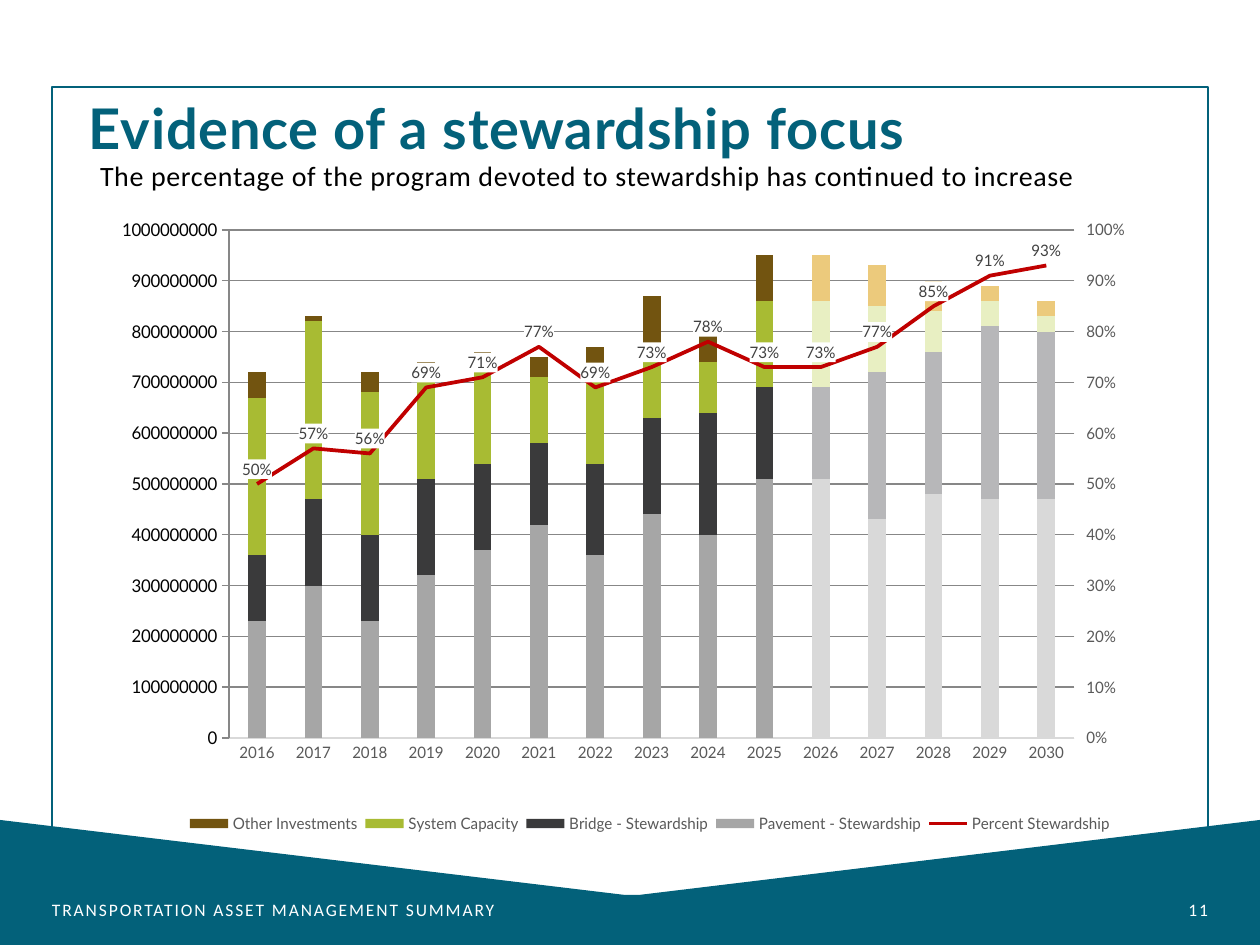
"""Build the stewardship slide with a stacked column and line chart."""
from dataclasses import dataclass

from pptx import Presentation
from pptx.chart.axis import ValueAxis
from pptx.chart.data import CategoryChartData
from pptx.dml.color import RGBColor
from pptx.enum.chart import (XL_CHART_TYPE, XL_LABEL_POSITION, XL_LEGEND_POSITION,
                             XL_MARKER_STYLE, XL_TICK_MARK)
from pptx.enum.shapes import MSO_SHAPE
from pptx.enum.text import MSO_ANCHOR, PP_ALIGN
from pptx.oxml import parse_xml
from pptx.oxml.ns import nsdecls, qn
from pptx.util import Pt

STACKED = XL_CHART_TYPE.COLUMN_STACKED
ABOVE = XL_LABEL_POSITION.ABOVE
LEGEND_RIGHT = XL_LEGEND_POSITION.RIGHT
NO_MARKER = XL_MARKER_STYLE.NONE
NO_TICK, TICK_OUT = XL_TICK_MARK.NONE, XL_TICK_MARK.OUTSIDE
RECTANGLE = MSO_SHAPE.RECTANGLE
TOP, BOTTOM = MSO_ANCHOR.TOP, MSO_ANCHOR.BOTTOM
LEFT, RIGHT = PP_ALIGN.LEFT, PP_ALIGN.RIGHT

EMU_PER_PX = 914400 / 126
MILLION = 1_000_000
CHART_WIDTH, CHART_HEIGHT = 1016, 655
COLORS = {
    "teal": "03617A", "white": "FFFFFF", "black": "000000", "grid": "D9D9D9",
    "axis": "595959", "label": "404040", "red": "C00000",
    "pavement": "A6A6A6", "pavement_plan": "D9D9D9",
    "bridge": "3A3A3B", "bridge_plan": "B7B7B9",
    "capacity": "A8BB33", "capacity_plan": "E8EFC2",
    "other": "725410", "other_plan": "ECCA7C",
}
YEARS = range(2016, 2031)
FIRST_PLANNED_YEAR = 2026


@dataclass(frozen=True)
class Investment:
    name: str
    color: str
    millions: tuple[int, ...]


INVESTMENTS = (
    Investment("Pavement - Stewardship", "pavement",
               (230, 300, 230, 320, 370, 420, 360, 440, 400, 510, 510, 430, 480, 470, 470)),
    Investment("Bridge - Stewardship", "bridge",
               (130, 170, 170, 190, 170, 160, 180, 190, 240, 180, 180, 290, 280, 340, 330)),
    Investment("System Capacity", "capacity",
               (310, 350, 280, 210, 180, 130, 170, 120, 100, 170, 170, 130, 80, 50, 30)),
    Investment("Other Investments", "other",
               (50, 10, 40, 20, 40, 40, 60, 120, 80, 90, 90, 80, 60, 30, 30)),
)
STEWARDSHIP = (.5, .57, .56, .69, .71, .77, .69, .73, .78, .73, .73, .77, .85, .91, .93)


def px(length: int) -> int:
    return round(length * EMU_PER_PX)


def rgb(name: str) -> RGBColor:
    return RGBColor.from_string(COLORS[name])


def paint(fill, color: str) -> None:
    fill.solid()
    fill.fore_color.rgb = rgb(color)


def style_font(font, size: int, color: str, family: str = "Lato") -> None:
    font.size, font.name = Pt(size), family
    font.color.rgb = rgb(color)


def add_text(slide, text: str, box: tuple[int, ...], *, size: int, color: str,
             family: str = "Calibri", bold: bool = False, tracking: float = 0.4,
             anchor=TOP, align=LEFT, side_inset: int = 13, spacing: float = 1.0) -> None:
    frame = slide.shapes.add_textbox(*map(px, box)).text_frame
    frame.word_wrap = True
    frame.vertical_anchor = anchor
    frame.margin_left = frame.margin_right = px(side_inset)
    paragraph = frame.paragraphs[0]
    paragraph.alignment, paragraph.line_spacing = align, spacing
    run = paragraph.add_run()
    run.text = text
    style_font(run.font, size, color, family)
    run.font.bold = bold
    run.font._element.set("spc", str(round(tracking * 100)))


def add_frame(slide) -> None:
    border = slide.shapes.add_shape(RECTANGLE, px(52), px(87), px(1156), px(839))
    border.shadow.inherit = False
    border.fill.background()
    border.line.color.rgb = rgb("teal")
    border.line.width = Pt(1)


def add_banner(slide) -> None:
    outline = slide.shapes.build_freeform(0, 820, scale=EMU_PER_PX)
    outline.add_line_segments([(625, 895), (639, 895), (1260, 820), (1260, 945), (0, 945)])
    banner = outline.convert_to_shape()
    banner.shadow.inherit = False
    paint(banner.fill, "teal")
    banner.line.fill.background()


def set_layout(parent, index: int, box: tuple[int, ...], target: str = "") -> None:
    for layout in parent.findall(qn("c:layout")):
        parent.remove(layout)
    sizes = (CHART_WIDTH, CHART_HEIGHT) * 2
    shares = "".join(f'<c:{key} val="{length / size:.4f}"/>'
                     for key, length, size in zip("xywh", box, sizes))
    parent.insert(index, parse_xml(
        f'<c:layout {nsdecls("c")}><c:manualLayout>{target}'
        f'<c:xMode val="edge"/><c:yMode val="edge"/>{shares}'
        '</c:manualLayout></c:layout>'))


def move_to_right_axis(plot_area) -> ValueAxis:
    columns = plot_area.find(qn("c:barChart"))
    share = columns.findall(qn("c:ser"))[-1]
    for column_only in share.findall(qn("c:invertIfNegative")):
        share.remove(column_only)
    line = parse_xml(
        f'<c:lineChart {nsdecls("c")}><c:grouping val="standard"/><c:varyColors val="0"/>'
        '<c:marker val="1"/><c:axId val="5001"/><c:axId val="5002"/></c:lineChart>')
    line.insert(2, share)
    columns.addnext(line)
    years = parse_xml(
        f'<c:catAx {nsdecls("c")}><c:axId val="5001"/><c:scaling/><c:delete val="1"/>'
        '<c:axPos val="b"/><c:crossAx val="5002"/></c:catAx>')
    percents = parse_xml(
        f'<c:valAx {nsdecls("c")}><c:axId val="5002"/><c:scaling/><c:delete val="0"/>'
        '<c:axPos val="r"/><c:crossAx val="5001"/><c:crosses val="max"/></c:valAx>')
    plot_area.findall(qn("c:valAx"))[-1].addnext(percents)
    percents.addnext(years)
    return ValueAxis(percents)


def style_value_axis(axis: ValueAxis, top: float, number_format: str, tick) -> None:
    axis.minimum_scale, axis.maximum_scale, axis.major_unit = 0, top, top / 10
    axis.major_tick_mark = tick
    axis.tick_labels.number_format = number_format
    axis.tick_labels.number_format_is_linked = False
    style_font(axis.tick_labels.font, 9, "axis")
    axis.format.line.fill.background()


def style_share_line(share) -> None:
    share.smooth = False
    share.marker.style = NO_MARKER
    share.format.line.color.rgb = rgb("red")
    share.format.line.width = Pt(2.25)
    labels = share.data_labels
    labels.show_value, labels.position = True, ABOVE
    labels.number_format, labels.number_format_is_linked = "0%", False
    style_font(labels.font, 9, "label")
    labels._element.find(qn("c:numFmt")).addnext(parse_xml(
        f'<c:spPr {nsdecls("c", "a")}><a:solidFill>'
        f'<a:srgbClr val="{COLORS["white"]}"/></a:solidFill></c:spPr>'))


def add_program_chart(slide) -> None:
    program = CategoryChartData()
    program.categories = [str(year) for year in YEARS]
    for investment in INVESTMENTS:
        program.add_series(investment.name, [m * MILLION for m in investment.millions])
    program.add_series("Percent Stewardship", STEWARDSHIP, "0%")
    box = map(px, (122, 200, CHART_WIDTH, CHART_HEIGHT))
    chart = slide.shapes.add_chart(STACKED, *box, program).chart
    chart.has_title = False
    style_font(chart.font, 10, "black")

    plot_area = chart.element.find(".//" + qn("c:plotArea"))
    percent_axis = move_to_right_axis(plot_area)
    set_layout(plot_area, 0, (69, 30, 881, 508), '<c:layoutTarget val="inner"/>')
    style_value_axis(chart.value_axis, 1000 * MILLION, '"$"#,##0,,', NO_TICK)
    style_value_axis(percent_axis, 1, "0%", TICK_OUT)
    years = chart.category_axis
    years.major_tick_mark = NO_TICK
    style_font(years.tick_labels.font, 9, "axis")
    for rule in (years.format.line, chart.value_axis.major_gridlines.format.line):
        rule.color.rgb = rgb("grid")
        rule.width = Pt(0.75)

    columns, shares = chart.plots
    columns.gap_width, columns.overlap, columns.vary_by_categories = 219, 100, False
    for investment, series in zip(INVESTMENTS, columns.series):
        paint(series.format.fill, investment.color)
        for index, year in enumerate(YEARS):
            if year >= FIRST_PLANNED_YEAR:
                paint(series.points[index].format.fill, investment.color + "_plan")
    style_share_line(shares.series[0])

    chart.has_legend = True
    chart.legend.position = LEGEND_RIGHT
    chart.legend.include_in_layout = False
    style_font(chart.legend.font, 9, "axis")
    set_layout(chart.element.find(".//" + qn("c:legend")), 1, (20, 607, 975, 33))


def main() -> None:
    deck = Presentation()
    deck.slide_width, deck.slide_height = px(1260), px(945)
    slide = deck.slides.add_slide(deck.slide_layouts[6])
    add_banner(slide)
    add_frame(slide)
    footer = {"size": 10, "color": "white", "tracking": 1.1, "anchor": BOTTOM, "side_inset": 0}
    add_text(slide, "TRANSPORTATION ASSET MANAGEMENT SUMMARY", (52, 876, 478, 50), **footer)
    add_text(slide, "11", (1086, 876, 122, 50), align=RIGHT, **footer)
    add_text(slide, "The percentage of the program devoted to stewardship has continued to increase",
             (87, 152, 1113, 667), size=16, color="black")
    add_text(slide, "Evidence of a stewardship focus", (76, 89, 1113, 79), size=32,
             color="teal", family="Lato", bold=True, anchor=BOTTOM, spacing=0.9)
    add_program_chart(slide)
    deck.save("out.pptx")


if __name__ == "__main__":
    main()
